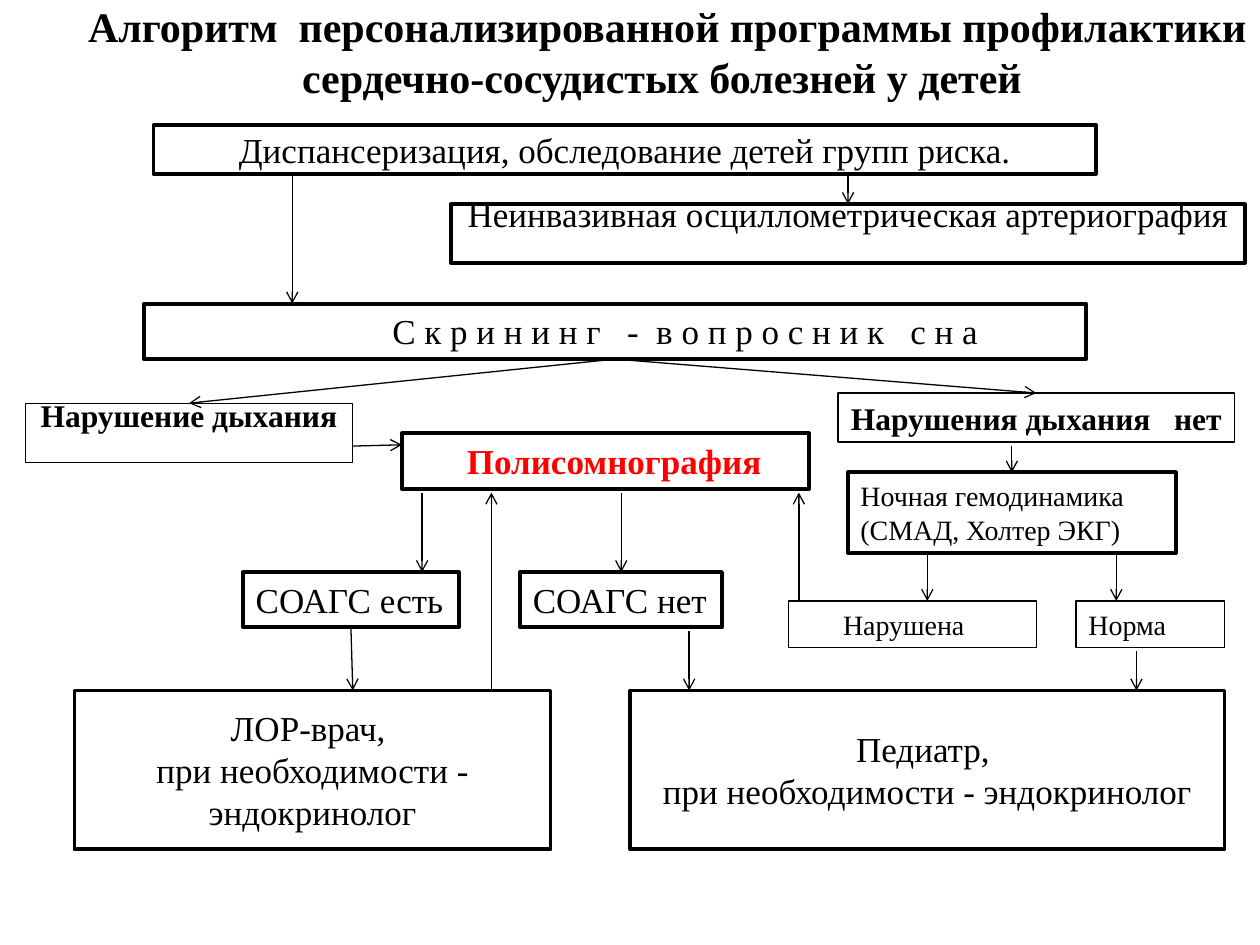
from lxml import etree
from pptx import Presentation
from pptx import util as u
from pptx.dml.color import RGBColor
from pptx.enum import shapes, text
from pptx.oxml.ns import qn


class Theme:
    font = "Times New Roman"
    ink = RGBColor(0, 0, 0)
    accent = RGBColor(0xFF, 0, 0)
    paper = RGBColor(0xFF, 0xFF, 0xFF)
    title, large, strong, small = 24, 20, 18, 16
    thin, medium, thick = 0.75, 2, 2.25
    pad = 3.6


TITLE = "Алгоритм  персонализированной программы профилактики сердечно-сосудистых болезней у детей "
TITLE_AREA = (42.5, 15.1, 677.5, 28.1)
GAP = 2.1  # space between a box and an arrow that does not touch it

# name: (left, top, width, height), lines of text, type size, outline
CENTRED = {
    "checkup": ((87.8, 71.3, 538.6, 28.1),
                ["Диспансеризация, обследование детей групп риска."], Theme.large, Theme.medium),
    "normal breathing": ((478.8, 224.6, 226.8, 28.1),
                         ["Нарушения дыхания   нет"], Theme.strong, Theme.thin),
    "disturbed breathing": ((14.4, 230.4, 187.2, 33.8),
                            ["Нарушение дыхания"], Theme.strong, Theme.thin),
    "ENT doctor": ((42.5, 394.6, 272.2, 90.7),
                   ["ЛОР-врач, ", "при необходимости - эндокринолог"], Theme.large, Theme.medium),
    "paediatrician": ((360, 394.6, 339.8, 90.7),
                      ["Педиатр, ", "при необходимости - эндокринолог"], Theme.large, Theme.medium),
    "arteriography": ((257.8, 116.6, 453.6, 33.8),
                      ["Неинвазивная осциллометрическая артериография"], Theme.large, Theme.medium),
}
LEFT_ALIGNED = {
    "apnoea": ((139, 326.9, 123.1, 31.7), ["СОАГС есть"], Theme.large, Theme.thick),
    "no apnoea": ((297.4, 326.9, 115.2, 31.7), ["СОАГС нет"], Theme.large, Theme.thick),
    "polysomnography": ((229.7, 247.7, 232.6, 31.7), ["Полисомнография"], Theme.large, Theme.thick),
    "screening": ((82.1, 173.5, 538.6, 31.7),
                  ["С к р и н и н г   -  в о п р о с н и к   с н а"], Theme.large, Theme.thick),
    "night": ((484.6, 270, 187.2, 46.1),
              ["Ночная гемодинамика (СМАД, Холтер ЭКГ)"], Theme.small, Theme.thick),
    "norm": ((614.9, 343.4, 85, 26.6), ["Норма"], Theme.small, Theme.thin),
    "disturbed": ((450.7, 343.4, 141.8, 26.6), ["Нарушена"], Theme.small, Theme.thin),
}
BOLD = {"normal breathing", "disturbed breathing", "polysomnography"}
INDENT = {"polysomnography": 30, "screening": 135, "disturbed": 24}
RAISED = {"arteriography": 23, "disturbed breathing": 20.7}  # room kept below the text

# source, target, x, gap below the upper box
VERTICAL = [
    ("checkup", "arteriography", 484.6, 0),
    ("checkup", "screening", 167, 0),
    ("polysomnography", "apnoea", 241.2, GAP),
    ("polysomnography", "no apnoea", 355, GAP),
    ("ENT doctor", "polysomnography", 280.8, GAP),
    ("disturbed", "polysomnography", 456.5, GAP),
    ("normal breathing", "night", 578.2, GAP),
    ("night", "disturbed", 529.9, 0),
    ("night", "norm", 637.9, 0),
    ("norm", "paediatrician", 649.4, GAP),
    ("no apnoea", "paediatrician", 393.8, GAP),
]
SLANTED = [
    ((351.4, 205.2), (592.2, 224.6)),
    ((351.4, 205.2), (108, 230.4)),
    ((200.5, 358.6), (201.6, 394.6)),
    ((201.6, 254.9), (229.7, 254.2)),
]


def write(shape, lines, size, align, bold=False, color=Theme.ink, indent=0):
    frame = shape.text_frame
    frame.word_wrap = True
    frame.text = "\n".join(lines)
    for para in frame.paragraphs:
        para.alignment = align
        if indent:
            para._p.get_or_add_pPr().set("marL", str(u.Pt(indent)))
        for span in para.runs:
            span.font.name = Theme.font
            span.font.size = u.Pt(size)
            span.font.bold = bold
            span.font.color.rgb = color


def add_box(page, name, area, lines, size, outline, centred):
    box = page.shapes.add_shape(shapes.MSO_SHAPE.RECTANGLE, *map(u.Pt, area))
    box.shadow.inherit = False
    if centred:
        box.fill.solid()
        box.fill.fore_color.rgb = Theme.paper
    else:
        box.fill.background()
    box.line.color.rgb = Theme.ink
    box.line.width = u.Pt(outline)
    frame = box.text_frame
    frame.vertical_anchor = text.MSO_ANCHOR.MIDDLE if centred else text.MSO_ANCHOR.TOP
    frame.margin_bottom = u.Pt(Theme.pad + RAISED.get(name, 0))
    write(box, lines, size, text.PP_ALIGN.CENTER if centred else text.PP_ALIGN.LEFT,
          name in BOLD, Theme.accent if name == "polysomnography" else Theme.ink,
          INDENT.get(name, 0))
    return box


def find_site(point, boxes):
    """Return the box and side number whose middle lies at the point, if any."""
    for box in boxes.values():
        left, top, width, height = (
            side.pt for side in (box.left, box.top, box.width, box.height))
        sites = [(left + width / 2, top), (left, top + height / 2),
                 (left + width / 2, top + height), (left + width, top + height / 2)]
        for number, (x, y) in enumerate(sites):
            if abs(x - point[0]) < 0.5 and abs(y - point[1]) < 0.5:
                return box, number
    return None


def add_arrow(page, start, end, boxes):
    arrow = page.shapes.add_connector(
        shapes.MSO_CONNECTOR.STRAIGHT, *map(u.Pt, (*start, *end)))
    for point, join in ((start, arrow.begin_connect), (end, arrow.end_connect)):
        site = find_site(point, boxes)
        if site:
            join(*site)
    arrow.line.color.rgb = Theme.ink
    arrow.line.width = u.Pt(Theme.thin)
    etree.SubElement(arrow.line._get_or_add_ln(), qn("a:tailEnd"), type="arrow")
    etree.SubElement(arrow._element.spPr, qn("a:effectLst"))


def vertical_ends(source, target, x, gap):
    """Run from the facing edge of one box to that of the other, up or down."""
    downward = source.top < target.top
    upper, lower = (source, target) if downward else (target, source)
    ends = (x, (upper.top + upper.height) / u.Pt(1) + gap), (x, lower.top / u.Pt(1))
    return ends if downward else ends[::-1]


def main():
    deck = Presentation()
    deck.slide_width, deck.slide_height = u.Pt(720), u.Pt(540)
    page = deck.slides.add_slide(deck.slide_layouts[6])

    title = page.shapes.add_textbox(*map(u.Pt, TITLE_AREA))
    title.text_frame.vertical_anchor = text.MSO_ANCHOR.MIDDLE
    write(title, [TITLE], Theme.title, text.PP_ALIGN.CENTER, bold=True)

    boxes = {}
    for group, centred in ((CENTRED, True), (LEFT_ALIGNED, False)):
        for name, details in group.items():
            boxes[name] = add_box(page, name, *details, centred)

    for source, target, x, gap in VERTICAL:
        add_arrow(page, *vertical_ends(boxes[source], boxes[target], x, gap), boxes)
    for start, end in SLANTED:
        add_arrow(page, start, end, boxes)

    deck.save("out.pptx")


if __name__ == "__main__":
    main()
